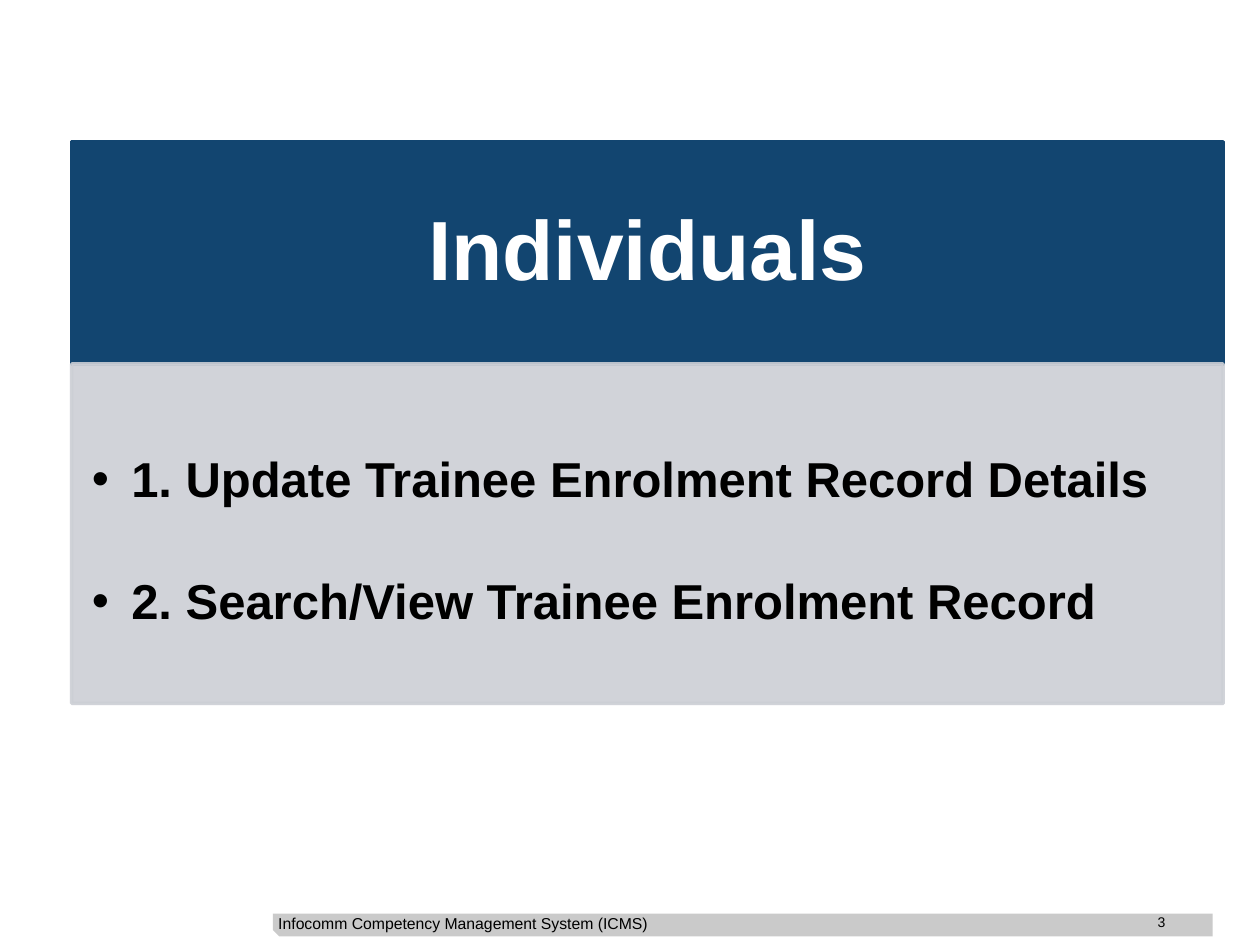
from lxml.etree import SubElement
from pptx import Presentation
from pptx.dml.color import RGBColor
from pptx.enum.shapes import MSO_SHAPE
from pptx.enum.text import MSO_ANCHOR, PP_ALIGN
from pptx.oxml.ns import qn
from pptx.util import Pt

COLOURS = {
    "navy": "124570",
    "panel": "CCCFD5",
    "footer": "CACACA",
    "black": "000000",
    "white": "FFFFFF",
}
LEFT, WIDTH = 41, 658
TASKS = [
    "1. Update Trainee Enrolment Record Details",
    "2. Search/View Trainee Enrolment Record",
]


def colour(name):
    return RGBColor.from_string(COLOURS[name])


def set_alpha(fill_parent, percent):
    for rgb in fill_parent.iter(qn("a:srgbClr")):
        SubElement(rgb, qn("a:alpha"), val=str(percent * 1000))


def add_panel(page, top, height, fill):
    panel = page.shapes.add_shape(
        MSO_SHAPE.RECTANGLE, Pt(LEFT), Pt(top), Pt(WIDTH), Pt(height))
    panel.shadow.inherit = False
    panel.fill.solid()
    panel.fill.fore_color.rgb = colour(fill)
    panel.line.color.rgb = colour(fill)
    panel.line.width = Pt(2)
    return panel


def set_margins(frame, left=0, top=0, right=0, bottom=0):
    frame.margin_left, frame.margin_top = Pt(left), Pt(top)
    frame.margin_right, frame.margin_bottom = Pt(right), Pt(bottom)


def style_paragraph(para, size, ink="black", bold=False, align=PP_ALIGN.LEFT):
    para.alignment = align
    para.font.name = "Arial"
    para.font.size = Pt(size)
    para.font.bold = bold
    para.font.color.rgb = colour(ink)


def add_bullet(para, indent):
    properties = para._p.get_or_add_pPr()
    properties.set("marL", str(Pt(indent)))
    properties.set("indent", str(-Pt(indent)))
    SubElement(properties, qn("a:buFont"), typeface="Arial")
    SubElement(properties, qn("a:buChar"), char="•")


def add_heading(page):
    frame = add_panel(page, 81, 127, "navy").text_frame
    frame.word_wrap = True
    frame.vertical_anchor = MSO_ANCHOR.MIDDLE
    set_margins(frame, 27, 15, 27, 15)
    para = frame.paragraphs[0]
    para.text = "Individuals"
    para.line_spacing = 0.9
    style_paragraph(para, 48, "white", True, PP_ALIGN.CENTER)


def add_task_list(page):
    panel = add_panel(page, 208, 194, "panel")
    set_alpha(panel._element.spPr, 90)
    frame = panel.text_frame
    frame.word_wrap = True
    frame.vertical_anchor = MSO_ANCHOR.TOP
    set_margins(frame, 11.5, 52, 16, 17)
    for index, task in enumerate(TASKS):
        para = frame.paragraphs[0] if index == 0 else frame.add_paragraph()
        para.text = task
        para.line_spacing = 0.9
        if index:
            para.space_before = Pt(39.6)
        add_bullet(para, 22.5)
        style_paragraph(para, 28, bold=True)


def add_footer_bar(page):
    left, top, right, bottom, cut = 156, 522, 693, 535, 3.5
    builder = page.shapes.build_freeform(Pt(left), Pt(top))
    corners = [(left, bottom - cut), (left + cut, bottom),
               (right, bottom), (right, top)]
    builder.add_line_segments([(Pt(x), Pt(y)) for x, y in corners], close=True)
    bar = builder.convert_to_shape()
    bar.shadow.inherit = False
    bar.fill.solid()
    bar.fill.fore_color.rgb = colour("footer")
    bar.line.fill.background()


def add_label(page, text, left, width, height, size, anchor, align):
    box = page.shapes.add_textbox(Pt(left), Pt(522), Pt(width), Pt(height))
    frame = box.text_frame
    frame.word_wrap = True
    frame.vertical_anchor = anchor
    set_margins(frame)
    para = frame.paragraphs[0]
    para.text = text
    style_paragraph(para, size, align=align)


def main():
    deck = Presentation()
    deck.slide_width, deck.slide_height = Pt(720), Pt(540)
    page = deck.slides.add_slide(deck.slide_layouts[6])
    add_footer_bar(page)
    add_label(page, "Infocomm Competency Management System (ICMS)",
              159, 351, 11, 9, MSO_ANCHOR.MIDDLE, PP_ALIGN.LEFT)
    add_label(page, "3", 648, 18, 18, 8, MSO_ANCHOR.TOP, PP_ALIGN.RIGHT)
    add_heading(page)
    add_task_list(page)
    deck.save("out.pptx")


if __name__ == "__main__":
    main()
